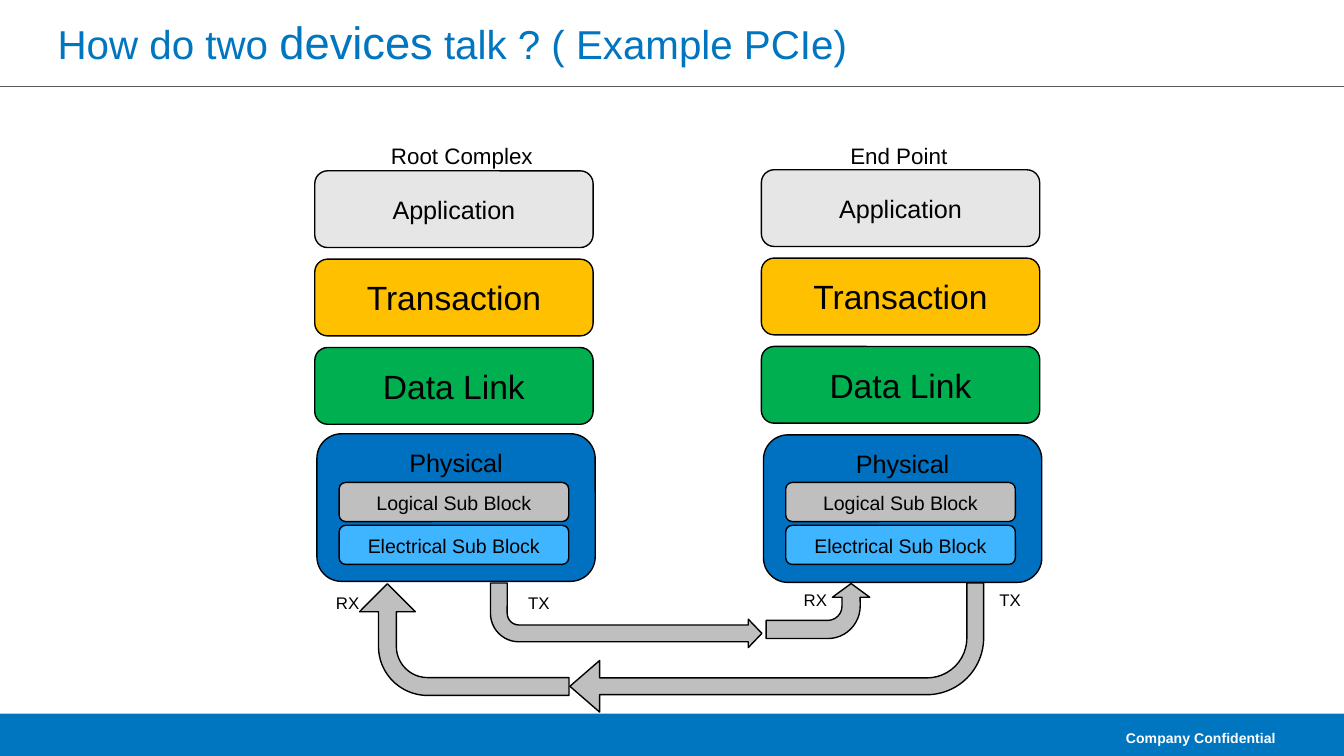
from lxml.etree import SubElement
from pptx import Presentation
from pptx.dml.color import RGBColor
from pptx.enum.shapes import MSO_CONNECTOR, MSO_SHAPE
from pptx.enum.text import MSO_ANCHOR, PP_ALIGN
from pptx.oxml.ns import qn
from pptx.util import Cm, Pt

COLORS = {
    "brand": "0076C0", "rule": "595959", "black": "000000", "white": "FFFFFF",
    "application": "E6E6E6", "transaction": "FFC000", "data_link": "00B050",
    "physical": "0070C0", "gray": "BFBFBF", "electrical": "40B5FF",
}


def rgb(name):
    return RGBColor.from_string(COLORS[name])


def write(tf, runs, size=12, color="black", bold=False,
          align=PP_ALIGN.LEFT, anchor=MSO_ANCHOR.TOP, wrap=True):
    """Write a string, or a list of (text, size) runs, as one paragraph."""
    if isinstance(runs, str):
        runs = [(runs, size)]
    tf.word_wrap = wrap
    tf.vertical_anchor = anchor
    p = tf.paragraphs[0]
    p.alignment = align
    for text, run_size in runs:
        r = p.add_run()
        r.text = text
        r.font.name = "Arial"
        r.font.size = Pt(run_size)
        r.font.bold = bold
        r.font.color.rgb = rgb(color)


class Deck:
    line_width = Pt(0.75)

    def __init__(self, prs):
        self.s = prs.slides.add_slide(prs.slide_layouts[6])

    def shape(self, kind, x, y, w, h, fill, line="black"):
        sp = self.s.shapes.add_shape(kind, Cm(x), Cm(y), Cm(w), Cm(h))
        sp.shadow.inherit = False
        sp.fill.solid()
        sp.fill.fore_color.rgb = rgb(fill)
        if line:
            sp.line.color.rgb = rgb(line)
            sp.line.width = self.line_width
        else:
            sp.line.fill.background()
        return sp

    def block(self, x, y, w, h, fill, text, **fmt):
        sp = self.shape(MSO_SHAPE.ROUNDED_RECTANGLE, x, y, w, h, fill)
        write(sp.text_frame, text, align=PP_ALIGN.CENTER, **fmt)

    def text(self, x, y, w, h, runs, **fmt):
        box = self.s.shapes.add_textbox(Cm(x), Cm(y), Cm(w), Cm(h))
        write(box.text_frame, runs, **fmt)

    def rule(self, x1, y1, x2, y2, color):
        line = self.s.shapes.add_connector(
            MSO_CONNECTOR.STRAIGHT, Cm(x1), Cm(y1), Cm(x2), Cm(y2))
        line.line.color.rgb = rgb(color)
        line.line.width = self.line_width
        SubElement(line._element.spPr, qn("a:effectLst"))

    def bent_arrow(self, x, y, w, h, rotation, flip, adjustments):
        sp = self.shape(MSO_SHAPE.BENT_ARROW, x, y, w, h, "gray")
        sp.rotation = rotation
        if flip:
            sp._element.spPr.get_or_add_xfrm().set("flipH", "1")
        for i, value in enumerate(adjustments):
            sp.adjustments[i] = value


def add_device(deck, x, top, physical_top):
    """One protocol stack: three layers above the physical layer."""
    layers = [("Application", "application", 13.5),
              ("Transaction", "transaction", 18),
              ("Data Link", "data_link", 18)]
    for i, (name, fill, size) in enumerate(layers):
        deck.block(x, top + i * 1.67, 5.26, 1.45, fill, name,
                   size=size, anchor=MSO_ANCHOR.MIDDLE)
    deck.block(x + 0.04, physical_top, 5.26, 2.79, "physical", "Physical", size=13.5)
    sub_blocks = [("Logical Sub Block", "gray"), ("Electrical Sub Block", "electrical")]
    for i, (name, fill) in enumerate(sub_blocks):
        deck.block(x + 0.46, 9.12 + i * 0.81, 4.34, 0.74, fill, name, size=10.5)


def main():
    prs = Presentation()
    prs.slide_width, prs.slide_height = Cm(25.4), Cm(14.29)
    deck = Deck(prs)

    # Title, rule and footer
    deck.shape(MSO_SHAPE.RECTANGLE, 0, 13.49, 25.4, 0.8, "brand", line=None)
    deck.rule(0, 1.64, 25.4, 1.64, "rule")
    deck.text(0.84, 0.15, 23.93, 1.27,
              [("How do two ", 21.6), ("devices", 24.3), (" talk ? ( Example PCIe)", 21.6)],
              color="brand", anchor=MSO_ANCHOR.MIDDLE)
    deck.text(20.75, 13.61, 3.61, 0.69, "Company Confidential", size=7.5, color="white",
              bold=True, align=PP_ALIGN.RIGHT, anchor=MSO_ANCHOR.MIDDLE, wrap=False)

    # Device stacks
    add_device(deck, 5.95, 3.23, 8.2)
    add_device(deck, 14.39, 3.21, 8.22)
    deck.text(7.14, 2.57, 3.2, 0.76, "Root Complex", wrap=False)
    deck.text(15.82, 2.57, 2.36, 0.76, "End Point", wrap=False)

    # Link from end point to root complex, then root complex to end point
    deck.bent_arrow(10.77, 11.02, 7.82, 2.44, 180, False, (0.13, 0.2, 0.23, 0.44))
    deck.bent_arrow(7.72, 10.11, 2.11, 3.96, 270, False, (0.16, 0.25, 0.25, 0.44))
    deck.bent_arrow(9.27, 11.02, 5.13, 1.22, 180, True, (0.26, 0.22, 0.21, 0.44))
    deck.bent_arrow(14.94, 10.57, 1.04, 1.96, 90, True, (0.33, 0.34, 0.25, 0.59))

    # Port labels
    for name, x, y in [("RX", 6.1, 11.07), ("TX", 9.73, 11.07),
                       ("RX", 14.94, 11.02), ("TX", 18.64, 11.02)]:
        deck.text(x, y, 0.97, 0.64, name, size=9, wrap=False)

    prs.save("out.pptx")


if __name__ == "__main__":
    main()
